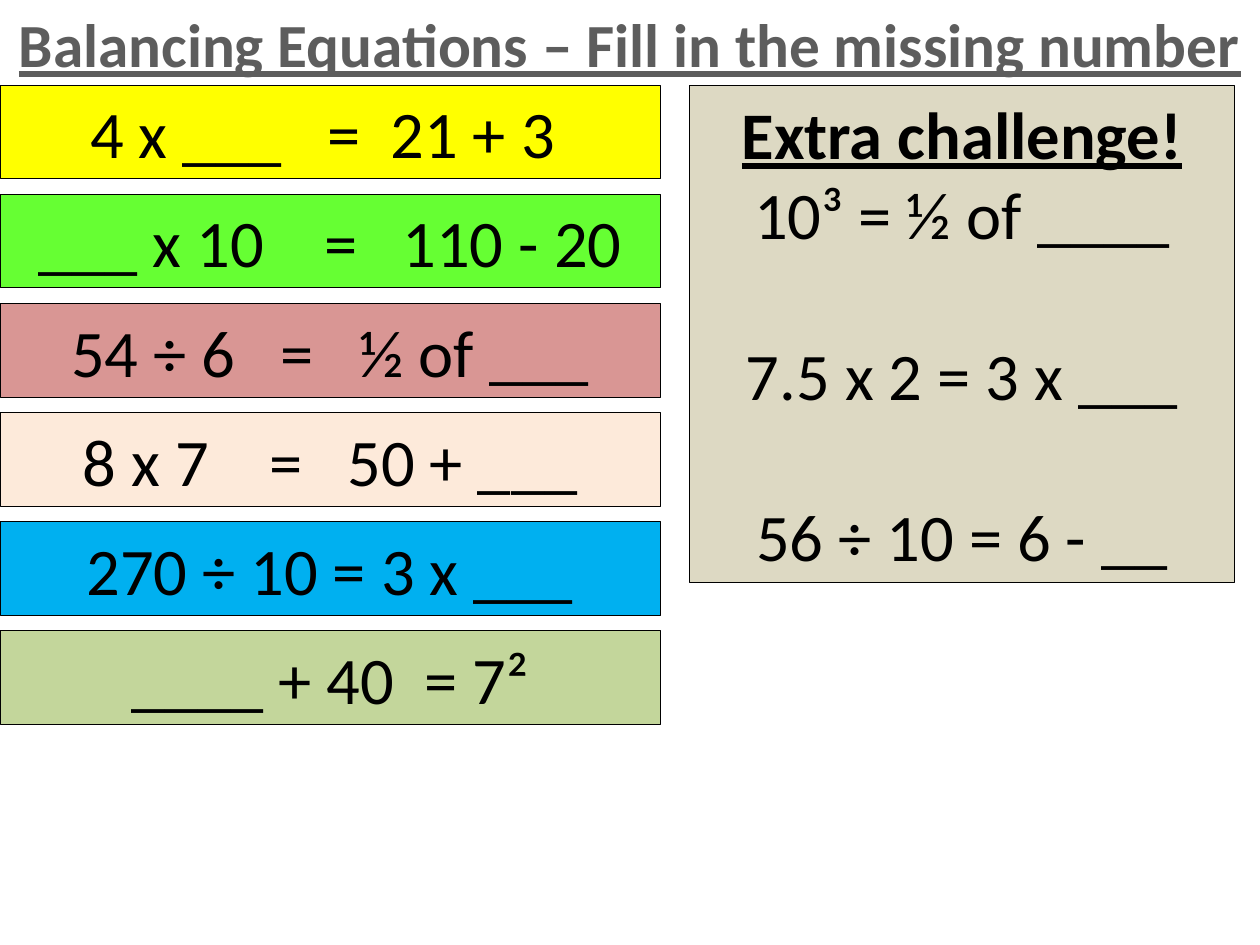
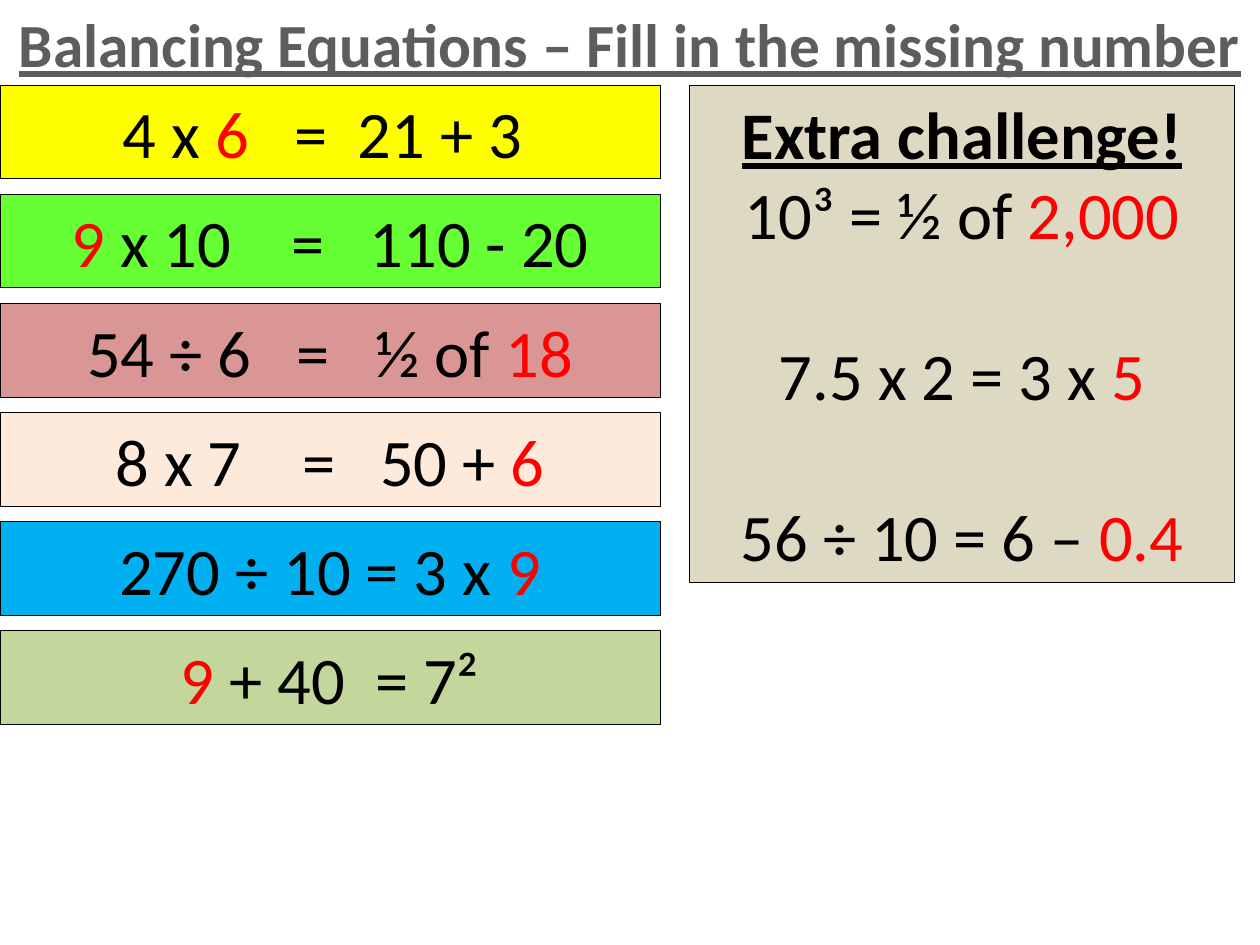
from pptx import Presentation
from pptx import util as u
from pptx.dml import color
from pptx.enum import shapes, text

FONT = "Calibri"
BLACK, RED, GREY, SAND = "000000", "FF0000", "5D5D5D", "DDD9C3"
SIZE = 38
SPACE_WIDTH = 8.6
LINE_HEIGHT = 46.4
TOP = 49
ROW_HEIGHT, ROW_STEP, ROW_WIDTH = 53.3, 62.3, 377.3

# ruff: noqa
questions = [
    ("4 x ?", 3, 2, "21 + 3 ", "___", "6", "FFFF00"),
    ("? x 10", 4, 3, "110 - 20", "___", "9", "66FF33"),
    ("54 ÷ 6", 3, 3, "½ of ?", "___", "18", "D99694"),
    ("8 x 7", 4, 3, "50 + ?", "___", "6", "FDEADA"),
    ("270 ÷ 10", 1, 1, "3 x ?", "___", "9", "00B0F0"),
    ("? + 40", 2, 1, "7²", "____", "9", "C3D69B"),
]
challenges = [
    ("10³", "½ of ?", "____", "2,000"),
    ("7.5 x 2", "3 x ?", "___", "5"),
    ("56 ÷ 10", "6 {minus} ?", "__", "0.4"),
]


def add_panel(slide, left, top, width, height, fill):
    panel = slide.shapes.add_shape(
        shapes.MSO_SHAPE.RECTANGLE, u.Pt(left), u.Pt(top), u.Pt(width), u.Pt(height))
    panel.shadow.inherit = False
    panel.fill.solid()
    panel.fill.fore_color.rgb = color.RGBColor.from_string(fill)
    panel.line.color.rgb = color.RGBColor.from_string(BLACK)
    panel.line.width = u.Pt(0.5)
    panel.text_frame.word_wrap = True
    return panel.text_frame


def write_equation(paragraph, left, before, after, right, unknown, unknown_colour):
    paragraph.alignment = text.PP_ALIGN.CENTER
    pieces = [(part, 1) for part in left.partition("?")]
    pieces += [(" ", before), ("=", 1), (" ", after)]
    pieces += [(part, 1) for part in right.partition("?")]
    for part, spaces in pieces:
        if not part:
            continue
        run = paragraph.add_run()
        run.text = unknown if part == "?" else part
        run.font.name = FONT
        run.font.size = u.Pt(SIZE)
        run.font.color.rgb = color.RGBColor.from_string(
            unknown_colour if part == "?" else BLACK)
        if spaces > 1:
            run.font._element.set("spc", str(round((spaces - 1) * SPACE_WIDTH * 100)))


deck = Presentation()
deck.slide_width, deck.slide_height = u.Pt(720), u.Pt(540)

for answered, unknown_colour, minus in [(False, BLACK, "-"), (True, RED, "–")]:
    slide = deck.slides.add_slide(deck.slide_layouts[5])

    heading = slide.shapes.title
    heading.left, heading.top, heading.width, heading.height = (
        u.Pt(0), u.Pt(0), u.Pt(720), u.Pt(49.7))
    heading.text_frame.text = "Balancing Equations – Fill in the missing number"
    heading.text_frame.auto_size = text.MSO_AUTO_SIZE.NONE
    heading.text_frame.paragraphs[0].alignment = text.PP_ALIGN.CENTER
    heading_font = heading.text_frame.paragraphs[0].runs[0].font
    heading_font.name, heading_font.size = FONT, u.Pt(35)
    heading_font.bold = heading_font.underline = True
    heading_font.color.rgb = color.RGBColor.from_string(GREY)

    for row, (left, before, after, right, blank, answer, fill) in enumerate(questions):
        question = add_panel(slide, 0, TOP + row * ROW_STEP, ROW_WIDTH, ROW_HEIGHT, fill)
        write_equation(question.paragraphs[0], left, before, after, right,
                       answer if answered else blank, unknown_colour)

    challenge_box = add_panel(slide, 393.9, TOP, 311.8, 283.7, SAND)
    challenge_box.text = "Extra challenge!"
    challenge_title = challenge_box.paragraphs[0]
    challenge_title.alignment = text.PP_ALIGN.CENTER
    title_font = challenge_title.runs[0].font
    title_font.name, title_font.size = FONT, u.Pt(SIZE)
    title_font.bold = title_font.underline = True
    title_font.color.rgb = color.RGBColor.from_string(BLACK)

    for row, (left, right, blank, answer) in enumerate(challenges):
        challenge = challenge_box.add_paragraph()
        challenge.space_before = u.Pt(LINE_HEIGHT if row else 0)
        write_equation(challenge, left, 1, 1, right.format(minus=minus),
                       answer if answered else blank, unknown_colour)

deck.save("out.pptx")
